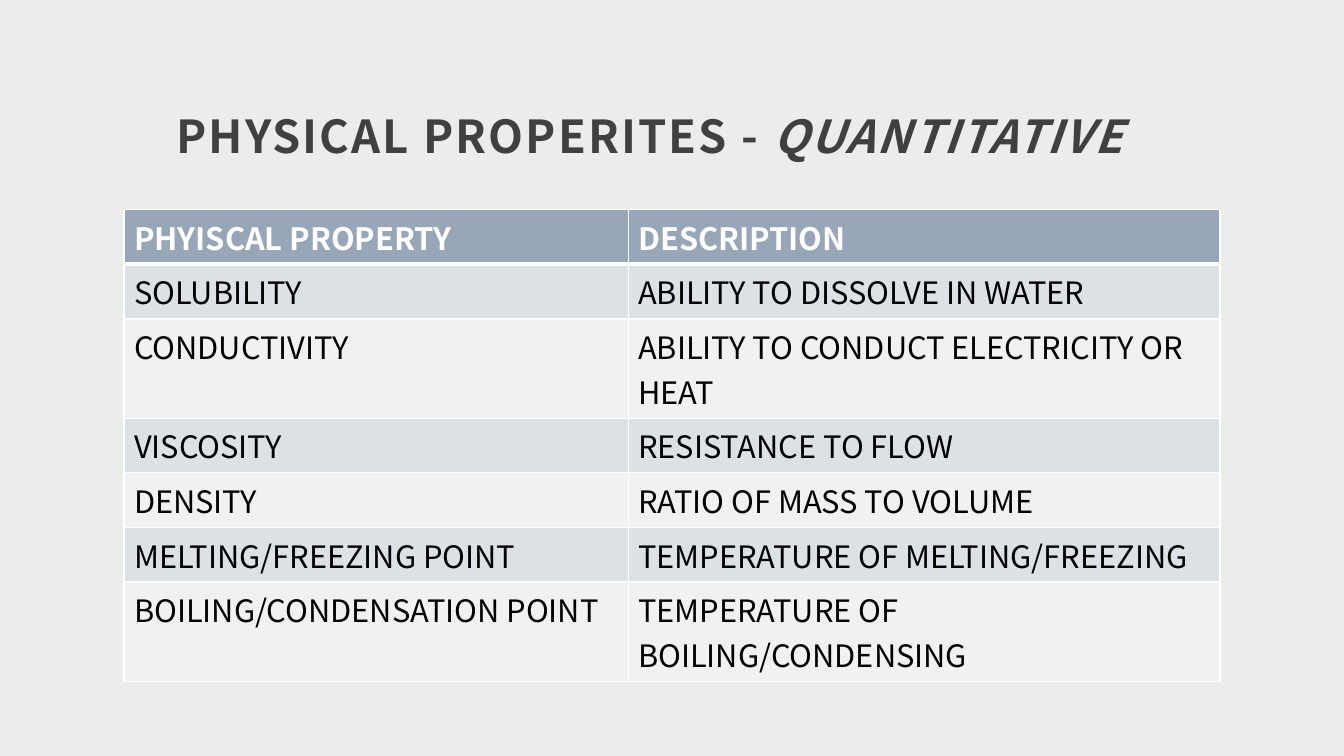
from dataclasses import dataclass

from lxml import etree
from pptx import Presentation
from pptx.dml.color import RGBColor
from pptx.enum.text import MSO_ANCHOR, MSO_AUTO_SIZE, PP_ALIGN
from pptx.oxml.ns import qn
from pptx.util import Inches, Pt

MIDDLE = MSO_ANCHOR.MIDDLE
NO_AUTOFIT = MSO_AUTO_SIZE.NONE
LEFT = PP_ALIGN.LEFT
TITLE_ONLY = 5


@dataclass(frozen=True)
class Theme:
    """Colours, font and type sizes of the slide."""
    font: str = "Noto Sans CJK JP"
    background: str = "EBEDEB"
    title: str = "404040"
    header: str = "97A7B8"
    bands: tuple = ("DDE1E6", "EFF1F3")
    white: str = "FFFFFF"
    black: str = "000000"
    title_size: float = 32.4
    table_size: float = 22


THEME = Theme()
PROPERTIES = [
    ("PHYISCAL PROPERTY", "DESCRIPTION"),
    ("SOLUBILITY", "ABILITY TO DISSOLVE IN WATER"),
    ("CONDUCTIVITY", "ABILITY TO CONDUCT ELECTRICITY OR HEAT"),
    ("VISCOSITY", "RESISTANCE TO FLOW"),
    ("DENSITY", "RATIO OF MASS TO VOLUME"),
    ("MELTING/FREEZING POINT", "TEMPERATURE OF MELTING/FREEZING"),
    ("BOILING/CONDENSATION POINT", "TEMPERATURE OF BOILING/CONDENSING"),
]


def set_fill(fill, color):
    """Make a fill solid in the given colour."""
    fill.solid()
    fill.fore_color.rgb = RGBColor.from_string(color)


def add_text(paragraph, text, *, size, color, bold=False, italic=False, spacing=0):
    """Add a formatted run to a paragraph."""
    run = paragraph.add_run()
    run.text = text
    font = run.font
    font.name, font.size = THEME.font, Pt(size)
    font.bold, font.italic = bold, italic
    font.color.rgb = RGBColor.from_string(color)
    if spacing:
        run._r.get_or_add_rPr().set("spc", str(round(spacing * 100)))


def add_borders(cell, widths):
    """Draw white cell borders with widths in points by side."""
    properties = cell._tc.get_or_add_tcPr()
    for side, width in widths.items():
        line = etree.SubElement(properties, qn(f"a:ln{side}"), w=str(Pt(width)))
        solid = etree.SubElement(line, qn("a:solidFill"))
        etree.SubElement(solid, qn("a:srgbClr"), val=THEME.white)


def build_title(slide, left, top, width, height):
    """Place and format the title in its box."""
    title = slide.shapes.title
    title.left, title.top = Inches(left), Inches(top)
    title.width, title.height = Inches(width), Inches(height)
    frame = title.text_frame
    frame.word_wrap, frame.auto_size = True, NO_AUTOFIT
    frame.vertical_anchor = MIDDLE
    frame.margin_left = frame.margin_right = frame.margin_top = Inches(0.12)
    frame.margin_bottom = Inches(0.1)
    paragraph = frame.paragraphs[0]
    paragraph.alignment, paragraph.line_spacing = LEFT, 1.5
    for text, italic in (("PHYSICAL PROPERITES - ", False), ("QUANTITATIVE", True)):
        add_text(paragraph, text, size=THEME.title_size, color=THEME.title,
                 bold=True, italic=italic, spacing=1.5)


def build_table(slide, left, top, width, first_width, row_height):
    """Place the banded table of properties and descriptions."""
    table = slide.shapes.add_table(
        len(PROPERTIES), 2, Inches(left), Inches(top), Inches(width),
        Inches(row_height * len(PROPERTIES))).table
    table.columns[0].width = Inches(first_width)
    table.columns[1].width = Inches(width - first_width)
    for row, texts in enumerate(PROPERTIES):
        header = row == 0
        for column, text in enumerate(texts):
            cell = table.cell(row, column)
            add_borders(cell, {"L": 1, "R": 1, "T": 3 if row == 1 else 1,
                               "B": 3 if header else 1})
            set_fill(cell.fill, THEME.header if header else THEME.bands[(row - 1) % 2])
            add_text(cell.text_frame.paragraphs[0], text, size=THEME.table_size,
                     color=THEME.white if header else THEME.black, bold=header)


def main():
    """Build and save the presentation."""
    presentation = Presentation()
    presentation.slide_width, presentation.slide_height = Inches(13.33), Inches(7.5)
    slide = presentation.slides.add_slide(presentation.slide_layouts[TITLE_ONLY])
    set_fill(slide.background.fill, THEME.background)
    build_title(slide, 1.63, 0.33, 11.33, 1.74)
    build_table(slide, 1.23, 2.08, 10.87, first_width=5, row_height=0.41)
    presentation.save("out.pptx")


if __name__ == "__main__":
    main()
